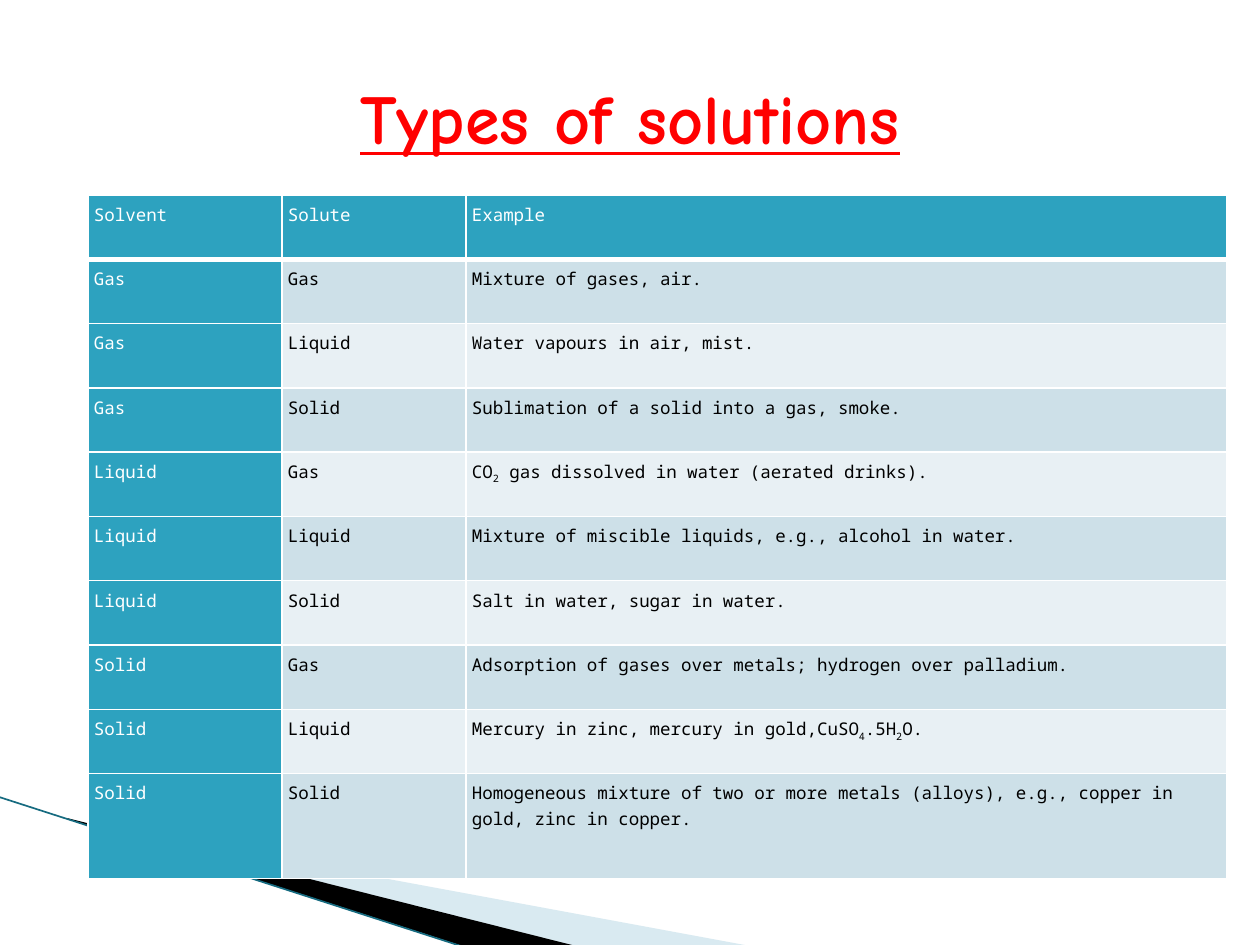
"""Build the slide on types of solutions."""
from pptx import Presentation
from pptx.dml.color import RGBColor
from pptx.enum.shapes import MSO_CONNECTOR
from pptx.enum.text import MSO_ANCHOR, PP_ALIGN
from pptx.oxml import parse_xml
from pptx.oxml.ns import nsdecls, qn
from pptx.util import Pt

WHITE = RGBColor(0xFF, 0xFF, 0xFF)
BLACK = RGBColor(0, 0, 0)
RED = RGBColor(0xFF, 0, 0)
TEAL = RGBColor(0x2D, 0xA2, 0xBF)
DEEP = RGBColor(0x16, 0x6B, 0x80)
PALE = RGBColor(0xA0, 0xCB, 0xDC)
BANDS = RGBColor(0xE8, 0xF0, 0xF4), RGBColor(0xCD, 0xE0, 0xE8)
SCALE = 914400 / 126

ROWS = [
    ("Solvent", "Solute", "Example"),
    ("Gas", "Gas", "Mixture of gases, air."),
    ("Gas", "Liquid", "Water vapours in air, mist."),
    ("Gas", "Solid", "Sublimation of a solid into a gas, smoke."),
    ("Liquid", "Gas", "CO_2_ gas dissolved in water (aerated drinks)."),
    ("Liquid", "Liquid", "Mixture of miscible liquids, e.g., alcohol in water."),
    ("Liquid", "Solid", "Salt in water, sugar in water."),
    ("Solid", "Gas", "Adsorption of gases over metals; hydrogen over palladium."),
    ("Solid", "Liquid", "Mercury in zinc, mercury in gold,CuSO_4_.5H_2_O."),
    ("Solid", "Solid", "Homogeneous mixture of two or more metals (alloys), "
                       "e.g., copper in gold, zinc in copper."),
]


def px(size):
    """Turn pixels into EMU."""
    return round(size * SCALE)


class Deck:
    """Hold the style and the current slide."""

    head = "Comic Neue"
    body = "Noto Sans Mono"

    def __init__(self, wide, high):
        self.file = Presentation()
        self.file.slide_width, self.file.slide_height = px(wide), px(high)
        self.slide = self.file.slides.add_slide(self.file.slide_layouts[5])
        self.shapes = self.slide.shapes

    def title(self, text, *box):
        shape = self.shapes.title
        shape.left, shape.top, shape.width, shape.height = map(px, box)
        frame = shape.text_frame
        frame.vertical_anchor = MSO_ANCHOR.MIDDLE
        para = frame.paragraphs[0]
        para.alignment = PP_ALIGN.CENTER
        run = self.run(para, text, self.head, 40, RED)
        run.font.bold = run.font.underline = True

    def run(self, para, text, name, size, color):
        run = para.add_run()
        run.text = text
        run.font.name, run.font.size = name, Pt(size)
        run.font.color.rgb = color
        return run

    def wedge(self, color, points, alpha=100):
        pen = self.shapes.build_freeform(*points[0], scale=SCALE)
        pen.add_line_segments(points[1:], close=True)
        shape = pen.convert_to_shape()
        shape.shadow.inherit = False
        shape.line.fill.background()
        shape.fill.solid()
        shape.fill.fore_color.rgb = color
        if alpha < 100:
            tint = shape._element.spPr.find(qn("a:solidFill"))[0]
            tint.append(parse_xml(f'<a:alpha {nsdecls("a")} val="{alpha * 1000}"/>'))

    def line(self, color, width, *ends):
        line = self.shapes.add_connector(MSO_CONNECTOR.STRAIGHT, *map(px, ends))
        line.line.color.rgb, line.line.width = color, Pt(width)
        line._element.spPr.append(parse_xml(f'<a:effectLst {nsdecls("a")}/>'))

    def table(self, left, top, cols, main, last):
        count = len(ROWS)
        grid = self.shapes.add_table(count, len(cols), px(left), px(top),
                                     px(sum(cols)), px(main + last)).table
        for col, wide in zip(grid.columns, cols):
            col.width = px(wide)
        for row in grid.rows:
            row.height = px(main) // (count - 1)
        grid.rows[count - 1].height = px(last)
        for i, row in enumerate(ROWS):
            for j, text in enumerate(row):
                cell = grid.cell(i, j)
                if i == 0:
                    self.edge(cell)
                dark = i == 0 or j == 0
                self.cell(cell, text, TEAL if dark else BANDS[i % 2],
                          WHITE if dark else BLACK)

    def edge(self, cell):
        for side, width in zip("LRTB", (1, 1, 1, 3)):
            cell._tc.get_or_add_tcPr().append(parse_xml(
                f'<a:ln{side} {nsdecls("a")} w="{Pt(width)}"><a:solidFill>'
                f'<a:srgbClr val="{WHITE}"/></a:solidFill></a:ln{side}>'))

    def cell(self, cell, text, fill, color):
        cell.fill.solid()
        cell.fill.fore_color.rgb = fill
        cell.margin_left = cell.margin_right = px(6)
        cell.margin_top = cell.margin_bottom = px(6)
        para = cell.text_frame.paragraphs[0]
        para.line_spacing = 1.07
        for k, part in enumerate(text.split("_")):
            run = self.run(para, part, self.body, 10, color)
            run.font.bold = False
            if k % 2:
                run._r.get_or_add_rPr().set("baseline", "-25000")


def main():
    deck = Deck(1260, 945)
    deck.wedge(PALE, [(69, 820), (750, 946), (575, 946), (69, 819)], 40)
    deck.wedge(BLACK, [(67, 818), (576, 946), (469, 948), (68, 819)])
    deck.line(DEEP, 0.95, -1, 797, 467, 948)
    deck.table(88, 195, (194, 184, 761), 579, 105)
    deck.title("Types of solutions", 63, 38, 1134, 158)
    deck.file.save("out.pptx")


if __name__ == "__main__":
    main()
